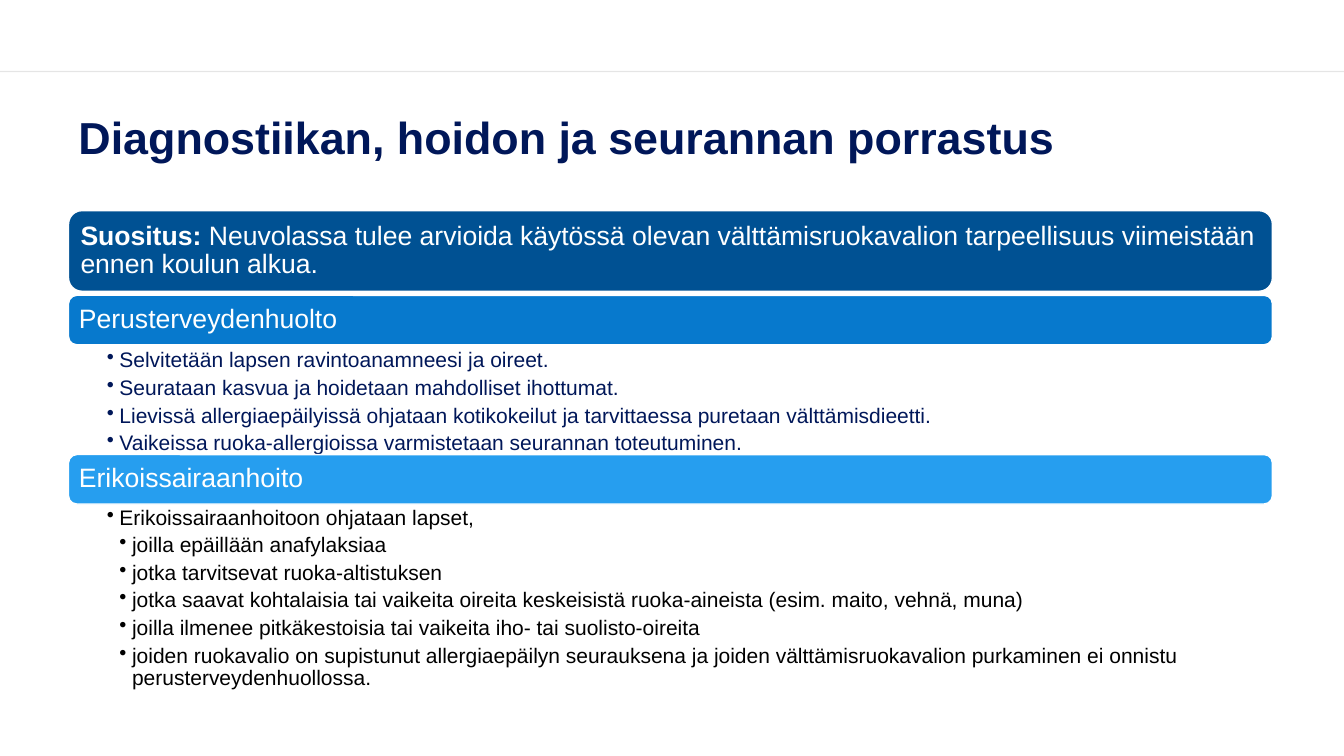
import pptx
import pptx.dml.color
import pptx.enum.shapes
import pptx.enum.text
import pptx.oxml
import pptx.oxml.ns
import pptx.util
from dataclasses import dataclass

TITLE = "Diagnostiikan, hoidon ja seurannan porrastus"
RECOMMENDATION = [
    ("Suositus: ", True),
    ("Neuvolassa tulee arvioida käytössä olevan välttämisruokavalion "
     "tarpeellisuus viimeistään ennen koulun alkua.", False),
]
PRIMARY_CARE = [
    (1, "Selvitetään lapsen ravintoanamneesi ja oireet."),
    (1, "Seurataan kasvua ja hoidetaan mahdolliset ihottumat."),
    (1, "Lievissä allergiaepäilyissä ohjataan kotikokeilut ja tarvittaessa "
        "puretaan välttämisdieetti."),
    (1, "Vaikeissa ruoka-allergioissa varmistetaan seurannan toteutuminen."),
]
SPECIAL_CARE = [
    (1, "Erikoissairaanhoitoon ohjataan lapset,"),
    (2, "joilla epäillään anafylaksiaa"),
    (2, "jotka tarvitsevat ruoka-altistuksen"),
    (2, "jotka saavat kohtalaisia tai vaikeita oireita keskeisistä "
        "ruoka-aineista (esim. maito, vehnä, muna)"),
    (2, "joilla ilmenee pitkäkestoisia tai vaikeita iho- tai suolisto-oireita"),
    (2, "joiden ruokavalio on supistunut allergiaepäilyn seurauksena ja joiden "
        "välttämisruokavalion purkaminen ei onnistu perusterveydenhuollossa."),
]


@dataclass(frozen=True)
class Theme:
    font: str = "Arial"
    navy: str = "001759"
    black: str = "000000"
    white: str = "FFFFFF"
    dark_blue: str = "005193"
    blue: str = "0779CD"
    light_blue: str = "269EEF"
    title_size: int = 32
    band_size: int = 19
    bullet_size: int = 15


THEME = Theme()
WIDTH, HEIGHT = 13.33, 7.5
LEFT, COLUMN = 0.68, 11.94
RULE_TOP, TITLE_TOP, TITLE_HEIGHT, STACK_TOP = 0.71, 0.93, 0.91, 2.09
INDENT = 0.125
BAND_INSETS = (0.08, 0.08, 0.08, 0.08)
BULLET_INSETS = (0.38, 0.03, 0.15, 0.03)

# kind, content, colour, height, gap below
STACK = [
    ("band", RECOMMENDATION, THEME.dark_blue, 0.8, 0.04),
    ("band", [("Perusterveydenhuolto", False)], THEME.blue, 0.49, 0.02),
    ("bullets", PRIMARY_CARE, THEME.navy, 1.07, 0),
    ("band", [("Erikoissairaanhoito", False)], THEME.light_blue, 0.49, 0),
    ("bullets", SPECIAL_CARE, THEME.black, 1.81, 0),
]


def inches(*lengths):
    return [pptx.util.Inches(length) for length in lengths]


def rgb(code):
    return pptx.dml.color.RGBColor.from_string(code)


def set_all(target, values):
    for name, value in values.items():
        setattr(target, name, value)


def set_frame(frame, insets, anchor):
    left, top, right, bottom = inches(*insets)
    set_all(frame, dict(
        word_wrap=True, vertical_anchor=anchor, margin_left=left,
        margin_top=top, margin_right=right, margin_bottom=bottom))


def write_para(para, spans, size, color, space_after=0):
    set_all(para, dict(alignment=pptx.enum.text.PP_ALIGN.LEFT, line_spacing=0.9,
                       space_after=pptx.util.Pt(space_after)))
    for text, bold in spans:
        span = para.add_run()
        span.text = text
        set_all(span.font, dict(name=THEME.font, size=pptx.util.Pt(size), bold=bold))
        span.font.color.rgb = rgb(color)


def add_bullet(para, level):
    properties = para._p.get_or_add_pPr()
    properties.set("marL", str(pptx.util.Inches(INDENT * level)))
    properties.set("indent", str(-pptx.util.Inches(INDENT)))
    properties.append(pptx.oxml.parse_xml(
        f'<a:buChar {pptx.oxml.ns.nsdecls("a")} char="•"/>'))


def add_rule(page):
    """Draw the faint full-width line above the title."""
    rule = page.shapes.add_connector(
        pptx.enum.shapes.MSO_CONNECTOR.STRAIGHT, *inches(0, RULE_TOP, WIDTH, RULE_TOP))
    rule.line.width = pptx.util.Pt(1)
    rule.line.color.rgb = rgb(THEME.black)
    color = rule.line._ln.find(".//" + pptx.oxml.ns.qn("a:srgbClr"))
    namespace = pptx.oxml.ns.nsdecls("a")
    color.append(pptx.oxml.parse_xml(f'<a:alpha {namespace} val="10000"/>'))
    rule._element.spPr.append(pptx.oxml.parse_xml(f"<a:effectLst {namespace}/>"))


def add_title(page):
    box = page.shapes.add_textbox(*inches(LEFT, TITLE_TOP, COLUMN, TITLE_HEIGHT))
    set_frame(box.text_frame, (0.1, 0.05, 0.1, 0.05), pptx.enum.text.MSO_ANCHOR.MIDDLE)
    write_para(box.text_frame.paragraphs[0], [(TITLE, True)],
               THEME.title_size, THEME.navy)


def add_band(page, spans, color, top, height):
    band = page.shapes.add_shape(
        pptx.enum.shapes.MSO_SHAPE.ROUNDED_RECTANGLE, *inches(LEFT, top, COLUMN, height))
    band.shadow.inherit = False
    band.fill.solid()
    band.fill.fore_color.rgb = rgb(color)
    band.line.color.rgb = rgb(THEME.white)
    band.line.width = pptx.util.Pt(1)
    set_frame(band.text_frame, BAND_INSETS, pptx.enum.text.MSO_ANCHOR.MIDDLE)
    write_para(band.text_frame.paragraphs[0], spans, THEME.band_size, THEME.white)


def add_bullets(page, items, color, top, height):
    box = page.shapes.add_textbox(*inches(LEFT, top, COLUMN, height))
    set_frame(box.text_frame, BULLET_INSETS, pptx.enum.text.MSO_ANCHOR.TOP)
    for index, (level, text) in enumerate(items):
        para = box.text_frame.add_paragraph() if index else box.text_frame.paragraphs[0]
        add_bullet(para, level)
        write_para(para, [(text, False)], THEME.bullet_size, color, space_after=3.5)


def main():
    deck = pptx.Presentation()
    deck.slide_width, deck.slide_height = inches(WIDTH, HEIGHT)
    page = deck.slides.add_slide(deck.slide_layouts[6])
    add_rule(page)
    add_title(page)
    draw = {"band": add_band, "bullets": add_bullets}
    top = STACK_TOP
    for kind, content, color, height, gap in STACK:
        draw[kind](page, content, color, top, height)
        top += height + gap
    deck.save("out.pptx")


if __name__ == "__main__":
    main()
